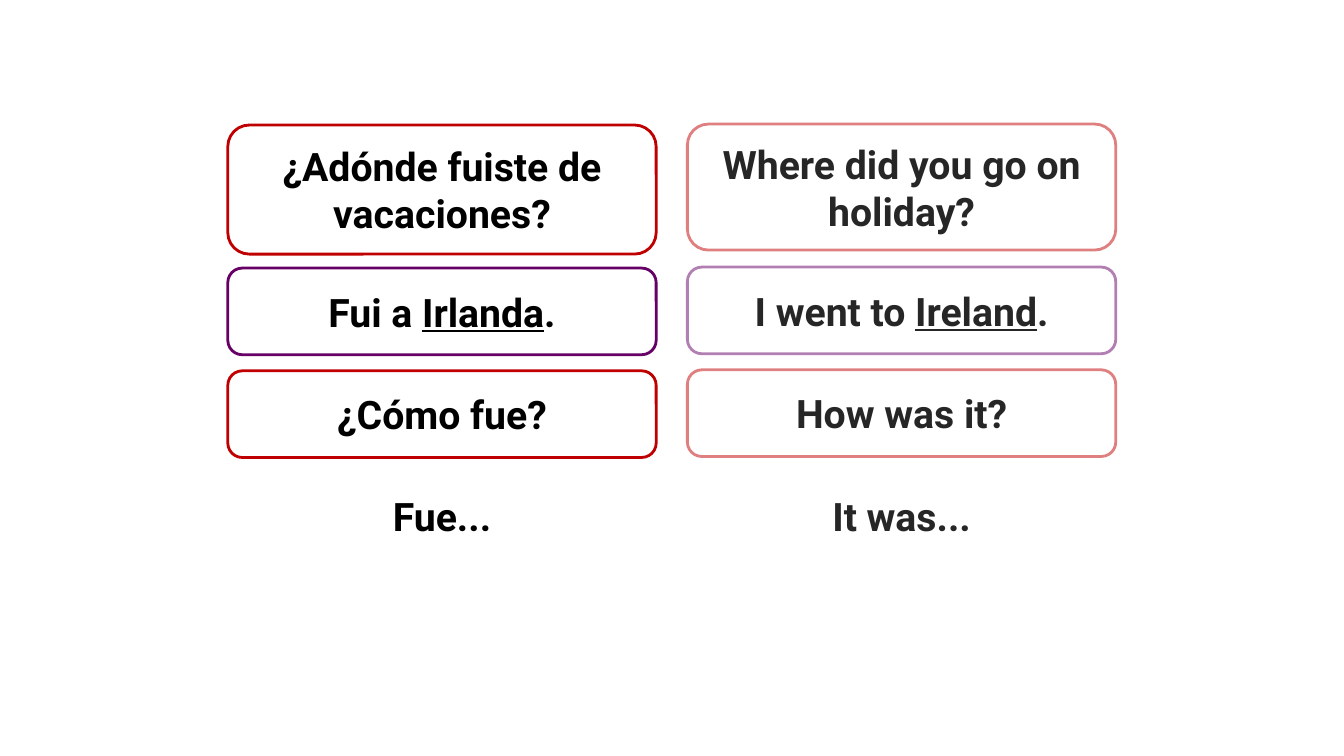
from dataclasses import dataclass

from lxml import etree
from pptx import Presentation
from pptx.dml.color import RGBColor
from pptx.enum import shapes, text
from pptx.oxml import ns
from pptx.util import Pt

RED, PURPLE, WHITE = "C00000", "660066", "FFFFFF"


@dataclass
class Row:
    spanish: str  # underscores enclose underlined words
    english: str
    color: str


@dataclass
class Column:
    lang: str
    left: float
    tops: tuple[float, ...]
    first: float  # height of the first card
    ink: str
    alpha: int  # opacity in percent


ROWS = [
    Row("¿Adónde fuiste de vacaciones?", "Where did you go on holiday?", RED),
    Row("Fui a _Irlanda_.", "I went to _Ireland_.", PURPLE),
    Row("¿Cómo fue?", "How was it?", RED),
    Row("Fue...", "It was...", WHITE),
]
COLUMNS = [
    Column("spanish", 162.7, (89.3, 191.5, 264.9, 337.7), 92.2, "000000", 100),
    Column("english", 491, (88.6, 190.8, 264.2, 337.7), 90, "262626", 50),
]
WIDTH, HEIGHT = 306, 61.9


def paint(fill, color: str, alpha: int = 100) -> None:
    """Set a solid colour, with optional transparency."""
    fill.solid()
    fill.fore_color.rgb = RGBColor.from_string(color)
    if alpha < 100:
        node = fill._xPr.find(ns.qn("a:solidFill"))[0]
        etree.SubElement(node, ns.qn("a:alpha"), val=str(alpha * 1000))


def write(frame, words: str, *, color: str, size: float = 28,
          font: str = "Roboto", bold: bool = True) -> None:
    """Write centred text, underlining the parts between underscores."""
    frame.word_wrap = True
    frame.vertical_anchor = text.MSO_ANCHOR.MIDDLE
    para = frame.paragraphs[0]
    para.alignment = text.PP_ALIGN.CENTER
    for i, part in enumerate(words.split("_")):
        run = para.add_run()
        run.text = part
        run.font.name, run.font.size, run.font.bold = font, Pt(size), bold
        run.font.underline = i % 2 == 1
        paint(run.font.fill, color)


def draw(slide, row: Row, col: Column, index: int) -> None:
    """Draw one phrase card."""
    height = col.first if index == 0 else HEIGHT
    card = slide.shapes.add_shape(
        shapes.MSO_SHAPE.ROUNDED_RECTANGLE, Pt(col.left), Pt(col.tops[index]),
        Pt(WIDTH), Pt(height))
    card.shadow.inherit = False
    paint(card.fill, WHITE, col.alpha)
    if row.color == WHITE and col.alpha == 100:
        card.line.fill.background()
    else:
        card.line.width = Pt(2)
        paint(card.line.fill, row.color, col.alpha)
    write(card.text_frame, getattr(row, col.lang), color=col.ink)


def main() -> None:
    deck = Presentation()
    deck.slide_width, deck.slide_height = Pt(960), Pt(540)
    slide = deck.slides.add_slide(deck.slide_layouts[6])

    # Spanish cards on the left, English on the right
    for col in COLUMNS:
        for index, row in enumerate(ROWS):
            draw(slide, row, col, index)
    deck.save("out.pptx")


if __name__ == "__main__":
    main()
